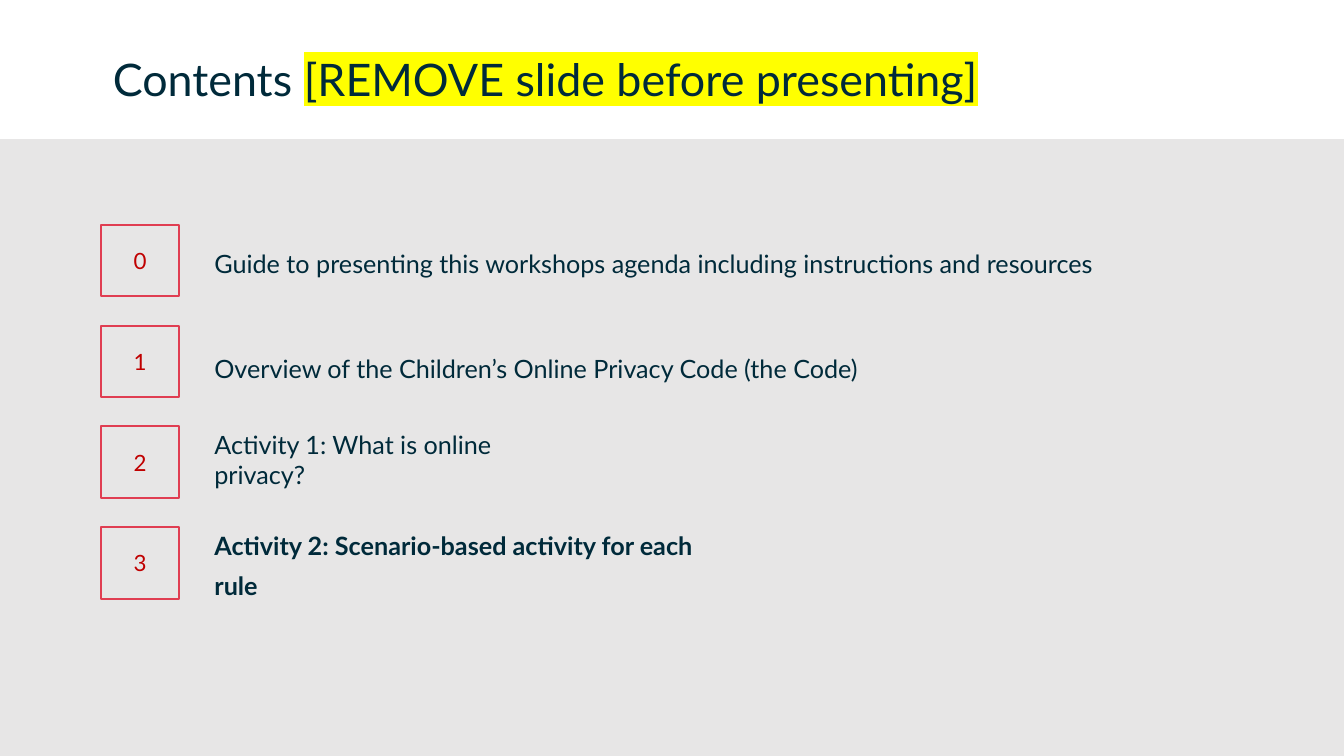
from pptx import Presentation
from pptx.dml.color import RGBColor
from pptx.enum.shapes import MSO_SHAPE
from pptx.enum.text import MSO_ANCHOR, PP_ALIGN
from pptx.oxml import parse_xml
from pptx.oxml.ns import nsdecls
from pptx.util import Inches, Pt

RECTANGLE = MSO_SHAPE.RECTANGLE
TOP, MIDDLE = MSO_ANCHOR.TOP, MSO_ANCHOR.MIDDLE
LEFT, CENTER = PP_ALIGN.LEFT, PP_ALIGN.CENTER

NAVY = RGBColor(0x00, 0x2A, 0x3A)
GREY = RGBColor(0xE7, 0xE6, 0xE6)
PINK = RGBColor(0xE0, 0x3E, 0x52)
RED = RGBColor(0xC0, 0x00, 0x00)
YELLOW = RGBColor(0xFF, 0xFF, 0x00)

TITLE = [("Contents ", None), ("[REMOVE slide before presenting]", YELLOW)]
FIRST_TOP, STEP = 2.23, 1
AGENDA = [
    ("Guide to presenting this workshops agenda including instructions and resources",
     2.37, 9.18, 0.43, 28.8, False),
    ("Overview of the Children’s Online Privacy Code (the Code)",
     3.41, 6.7, 0.43, 28.8, False),
    ("Activity 1: What is online privacy?", 4.41, 3.8, 0.35, None, False),
    ("Activity 2: Scenario-based activity for each rule",
     5.37, 5.3, 0.43, 28.8, True),
]


class ContentsSlide:
    font_name = "Lato"

    def __init__(self, deck):
        self.page = deck.slides.add_slide(deck.slide_layouts[6])

    def rectangle(self, left, top, width, height, fill=None, line=None):
        box = self.page.shapes.add_shape(
            RECTANGLE, Inches(left), Inches(top), Inches(width), Inches(height))
        box.shadow.inherit = False
        if fill is None:
            box.fill.background()
        else:
            box.fill.solid()
            box.fill.fore_color.rgb = fill
        if line is None:
            box.line.fill.background()
        else:
            box.line.color.rgb = line
            box.line.width = Pt(1.5)
        return box

    def fill_text(self, box, spans, size, color, bold=False, anchor=MIDDLE,
                  align=LEFT, spacing=None):
        box.text_frame.word_wrap = True
        box.text_frame.vertical_anchor = anchor
        para = box.text_frame.paragraphs[0]
        para.alignment = align
        if spacing:
            para.line_spacing = Pt(spacing)
        style = {"size": Pt(size), "bold": bold, "name": self.font_name}
        for text, highlight in spans:
            span = para.add_run()
            span.text = text
            for key, value in style.items():
                setattr(span.font, key, value)
            span.font.color.rgb = color
            if highlight:
                span._r.rPr[0].addnext(parse_xml(
                    f'<a:highlight {nsdecls("a")}><a:srgbClr val="{highlight}"/></a:highlight>'))

    def text(self, left, top, width, height, margins, spans, size, **layout):
        box = self.page.shapes.add_textbox(
            Inches(left), Inches(top), Inches(width), Inches(height))
        for side, margin in zip(("left", "top", "right", "bottom"), margins):
            setattr(box.text_frame, f"margin_{side}", Inches(margin))
        self.fill_text(box, spans, size, NAVY, **layout)

    def number(self, index):
        box = self.rectangle(1, FIRST_TOP + index * STEP, 0.78, 0.71, line=PINK)
        self.fill_text(box, [(str(index), None)], 16, RED, align=CENTER)


def main():
    deck = Presentation()
    deck.slide_width, deck.slide_height = Inches(13.34), Inches(7.5)
    contents = ContentsSlide(deck)
    contents.rectangle(0, 1.38, 13.34, 6.12, fill=GREY)
    contents.text(1.12, 0.51, 9.65, 0.54, (0, 0, 0, 0), TITLE, 32, anchor=TOP)
    for index, (label, top, width, height, spacing, bold) in enumerate(AGENDA):
        contents.number(index)
        contents.text(2.03, top, width, height, (0.1, 0, 0.1, 0.05),
                      [(label, None)], 18, bold=bold, spacing=spacing)
    deck.save("out.pptx")


if __name__ == "__main__":
    main()
